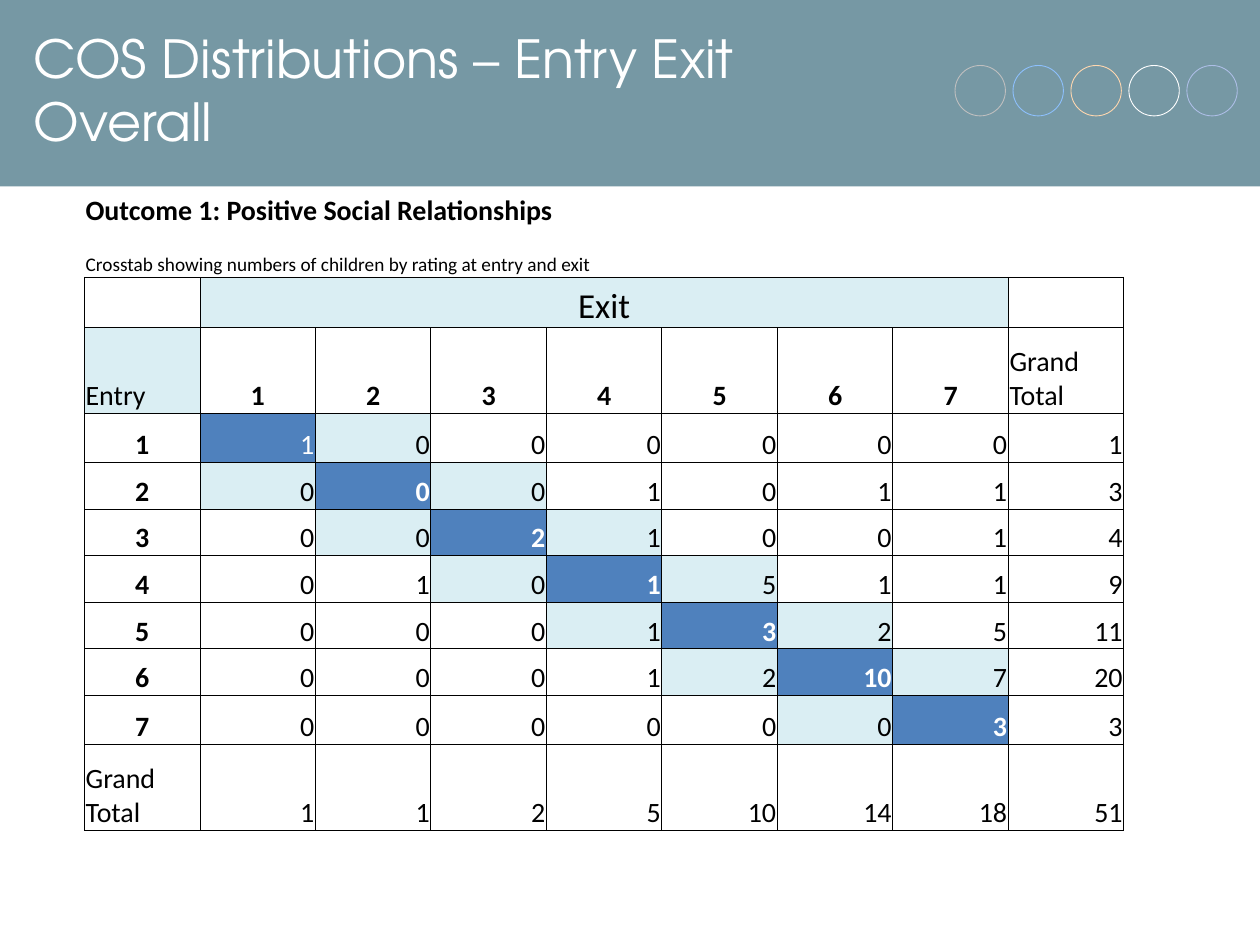
from dataclasses import dataclass

from lxml.etree import SubElement
from pptx import Presentation
from pptx.dml.color import RGBColor
from pptx.enum.shapes import MSO_SHAPE as Preset
from pptx.enum.text import MSO_ANCHOR as Anchor, PP_ALIGN as Align
from pptx.oxml.ns import qn
from pptx.util import Inches, Pt


@dataclass(frozen=True)
class Theme:
    band: str = "7698A4"
    white: str = "FFFFFF"
    black: str = "000000"
    diagonal: str = "4F81BD"
    tint: str = "DAEEF3"
    rings: tuple = ("BFBFBF", "8DC0FD", "FFD7AF", "FFFFFF", "ADBEE6")
    title_font: str = "TeX Gyre Adventor"
    body_font: str = "Calibri"
    title_size: int = 30
    exit_size: int = 20
    body_size: int = 16
    caption_size: int = 11
    line_width: float = 0.5


THEME = Theme()

# Children by entry rating (rows) and exit rating (columns)
COUNTS = [
    [1, 0, 0, 0, 0, 0, 0],
    [0, 0, 0, 1, 0, 1, 1],
    [0, 0, 2, 1, 0, 0, 1],
    [0, 1, 0, 1, 5, 1, 1],
    [0, 0, 0, 1, 3, 2, 5],
    [0, 0, 0, 1, 2, 10, 7],
    [0, 0, 0, 0, 0, 0, 3],
]
ROW_HEIGHTS = [0.39, 0.39, 0.4, 0.68, 0.39, 0.37, 0.37, 0.37, 0.37, 0.37, 0.39, 0.68]
FIRST_COUNT_ROW = 4


def color(value):
    return RGBColor.from_string(value)


def style_text(paragraph, font, size, ink, bold=False):
    for run in paragraph.runs:
        run.font.name, run.font.size, run.font.bold = font, Pt(size), bold
        run.font.color.rgb = color(ink)


def add_header(slide, left, top, width, height):
    # Band
    band = slide.shapes.add_shape(
        Preset.RECTANGLE, Inches(left), Inches(top), Inches(width), Inches(height))
    band.shadow.inherit = False
    band.fill.solid()
    band.fill.fore_color.rgb = color(THEME.band)
    band.line.fill.background()

    # Row of rings
    diameter, pitch = 0.4, 0.46
    for index, ring_color in enumerate(THEME.rings):
        ring = slide.shapes.add_shape(
            Preset.OVAL, Inches(left + 7.58 + index * pitch), Inches(top + 0.54),
            Inches(diameter), Inches(diameter))
        ring.shadow.inherit = False
        ring.fill.background()
        ring.line.color.rgb = color(ring_color)
        ring.line.width = Pt(THEME.line_width)

    # Title
    title = slide.shapes.add_textbox(
        Inches(left + 0.17), Inches(top + 0.1), Inches(7.33), Inches(1.25))
    frame = title.text_frame
    frame.word_wrap = True
    frame.vertical_anchor = Anchor.MIDDLE
    paragraph = frame.paragraphs[0]
    paragraph.text = "COS Distributions – Entry Exit\nOverall"
    style_text(paragraph, THEME.title_font, THEME.title_size, THEME.white)


def set_borders(cell, visible_sides):
    properties = cell._tc.get_or_add_tcPr()
    for side in "LRTB":
        line = SubElement(properties, qn(f"a:ln{side}"), w=str(Pt(THEME.line_width)))
        if side in visible_sides:
            fill = SubElement(line, qn("a:solidFill"))
            SubElement(fill, qn("a:srgbClr"), val=THEME.black)
        else:
            SubElement(line, qn("a:noFill"))


def prepare_cell(cell, row):
    set_borders(cell, {0: "", 1: "B"}.get(row, "LRTB"))
    cell.fill.background()
    cell.vertical_anchor = Anchor.BOTTOM
    cell.margin_left = cell.margin_right = cell.margin_top = Inches(0.01)
    cell.margin_bottom = 0


def write_cell(cell, text, align=Align.LEFT, size=THEME.body_size,
               ink=THEME.black, bold=False, fill=None):
    paragraph = cell.text_frame.paragraphs[0]
    paragraph.text = str(text)
    paragraph.alignment = align
    style_text(paragraph, THEME.body_font, size, ink, bold)
    if fill:
        cell.fill.solid()
        cell.fill.fore_color.rgb = color(fill)


def add_crosstab(slide, left, top, width, height):
    ratings = len(COUNTS)
    total_row, total_column = FIRST_COUNT_ROW + ratings, ratings + 1
    table = slide.shapes.add_table(
        len(ROW_HEIGHTS), ratings + 2,
        Inches(left), Inches(top), Inches(width), Inches(height)).table
    table.first_row = table.horz_banding = False
    for column in table.columns:
        column.width = Inches(width / (ratings + 2))
    for row, row_height in enumerate(ROW_HEIGHTS):
        table.rows[row].height = Inches(row_height)
        for cell in table.rows[row].cells:
            prepare_cell(cell, row)

    # Headings
    for row, first, last in ((0, 0, 4), (1, 0, 6), (2, 1, ratings)):
        table.cell(row, first).merge(table.cell(row, last))
    write_cell(table.cell(0, 0), "Outcome 1: Positive Social Relationships", bold=True)
    write_cell(table.cell(1, 0),
               "Crosstab showing numbers of children by rating at entry and exit",
               size=THEME.caption_size)
    write_cell(table.cell(2, 1), "Exit", Align.CENTER, THEME.exit_size, fill=THEME.tint)
    write_cell(table.cell(3, 0), "Entry", fill=THEME.tint)
    write_cell(table.cell(3, total_column), "Grand Total")
    write_cell(table.cell(total_row, 0), "Grand Total")

    # Ratings and totals
    for index, counts in enumerate(COUNTS):
        row, column = FIRST_COUNT_ROW + index, index + 1
        for cell in (table.cell(3, column), table.cell(row, 0)):
            write_cell(cell, index + 1, Align.CENTER, bold=True)
        write_cell(table.cell(row, total_column), sum(counts), Align.RIGHT)
        exit_total = sum(entry[index] for entry in COUNTS)
        write_cell(table.cell(total_row, column), exit_total, Align.RIGHT)

        # Same rating is dark, one step away is tinted
        for exit_index, count in enumerate(counts):
            distance = abs(index - exit_index)
            same = distance == 0
            write_cell(table.cell(row, exit_index + 1), count, Align.RIGHT,
                       ink=THEME.white if same else THEME.black,
                       bold=same and index > 0,
                       fill={0: THEME.diagonal, 1: THEME.tint}.get(distance))
    write_cell(table.cell(total_row, total_column), sum(map(sum, COUNTS)), Align.RIGHT)


def main():
    presentation = Presentation()
    presentation.slide_width, presentation.slide_height = Inches(10), Inches(7.5)
    slide = presentation.slides.add_slide(presentation.slide_layouts[6])
    add_header(slide, 0, -0.02, 10, 1.5)
    add_crosstab(slide, 0.67, 1.42, 8.25, sum(ROW_HEIGHTS))
    presentation.save("out.pptx")


if __name__ == "__main__":
    main()
